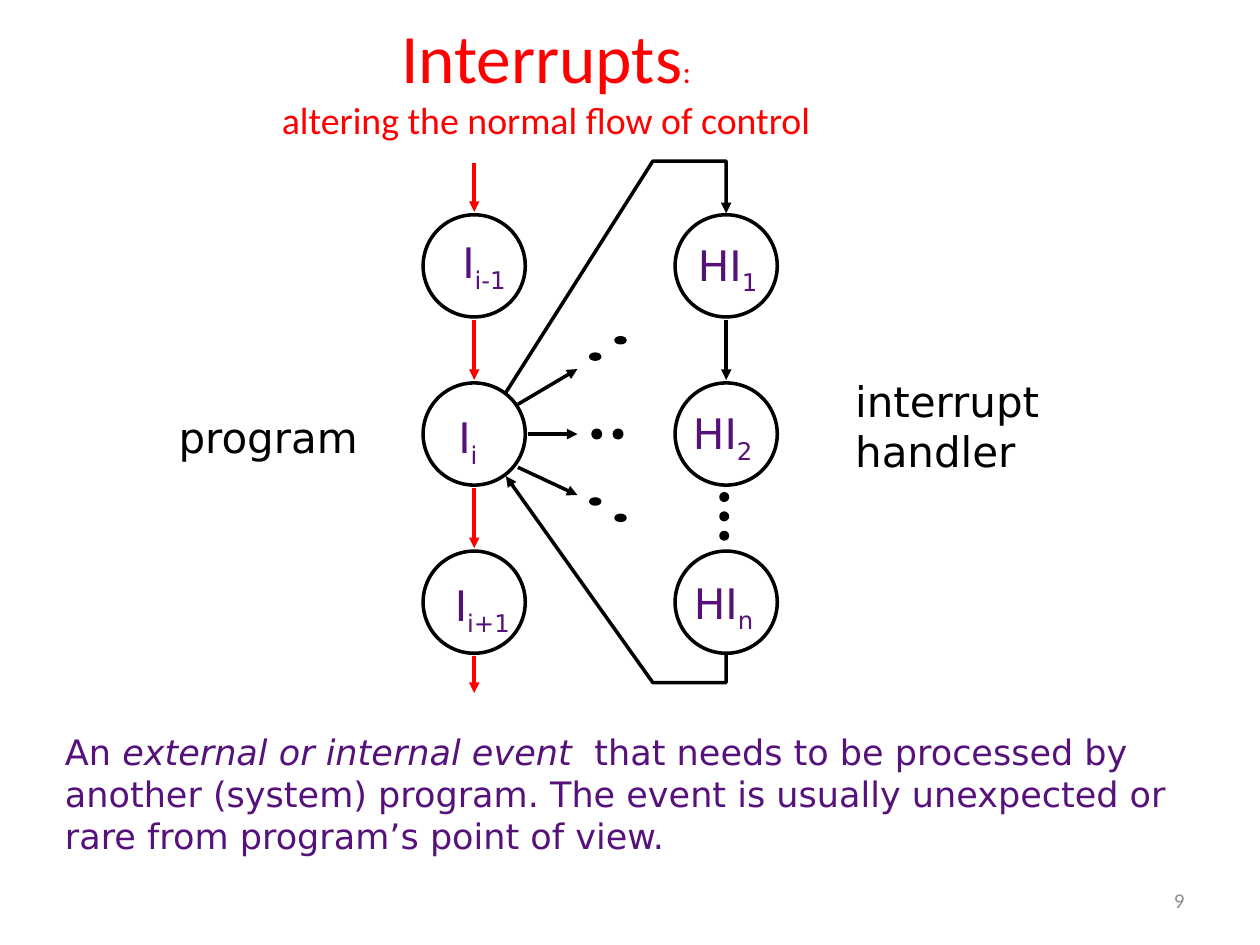
from dataclasses import dataclass

from pptx import Presentation
from pptx import util as u
from pptx.dml.color import RGBColor
from pptx.enum import shapes, text
from pptx.oxml import ns, xmlchemy


@dataclass(frozen=True)
class Theme:
    red: str = "FF0000"
    black: str = "000000"
    white: str = "FFFFFF"
    purple: str = "56127A"
    grey: str = "8C8C8C"
    heading_font: str = "Calibri"
    body_font: str = "DejaVu Sans"
    title_size: float = 39.6
    colon_size: float = 18
    subtitle_size: float = 21.6
    label_size: float = 24
    body_size: float = 20
    number_size: float = 12
    line_width: float = 2


THEME = Theme()
PROGRAM_X, HANDLER_X = 9.56, 14.64
ROWS = [5.36 + 3.39 * row for row in range(3)]
RADIUS = 1.03


def style_line(shape, color, arrow=False):
    shape.line.color.rgb = RGBColor.from_string(color)
    shape.line.width = u.Pt(THEME.line_width)
    if arrow:
        tail = xmlchemy.OxmlElement("a:tailEnd")
        tail.set("type", "triangle")
        shape.element.spPr.find(ns.qn("a:ln")).append(tail)


def add_arrow(page, start, end, color=THEME.black):
    ends = [u.Cm(value) for value in (*start, *end)]
    arrow = page.shapes.add_connector(shapes.MSO_CONNECTOR.STRAIGHT, *ends)
    style_line(arrow, color, arrow=True)
    arrow.element.spPr.append(xmlchemy.OxmlElement("a:effectLst"))


def add_route(page, points):
    corners = [(u.Cm(x), u.Cm(y)) for x, y in points]
    builder = page.shapes.build_freeform(*corners[0])
    builder.add_line_segments(corners[1:], close=False)
    route = builder.convert_to_shape()
    route.shadow.inherit = False
    route.fill.background()
    style_line(route, THEME.black, arrow=True)


def add_ellipse(page, center, width, height, fill=None):
    x, y = center
    ellipse = page.shapes.add_shape(
        shapes.MSO_SHAPE.OVAL, u.Cm(x - width / 2), u.Cm(y - height / 2),
        u.Cm(width), u.Cm(height))
    ellipse.shadow.inherit = False
    if fill:
        ellipse.fill.solid()
        ellipse.fill.fore_color.rgb = RGBColor.from_string(fill)
    else:
        ellipse.fill.background()
    style_line(ellipse, THEME.black)


def add_span(para, words, font, size, color, italic=False, subscript=False):
    span = para.add_run()
    span.text = words
    span.font.name = font
    span.font.size = u.Pt(size)
    span.font.color.rgb = RGBColor.from_string(color)
    if italic:
        span.font.italic = True
    if subscript:
        span.font._element.set("baseline", "-25000")


def add_text(page, place, lines, align=text.PP_ALIGN.LEFT,
             anchor=text.MSO_ANCHOR.TOP, wrap=True, grow=True, **style):
    box = page.shapes.add_textbox(*[u.Cm(value) for value in place])
    frame = box.text_frame
    frame.word_wrap = wrap
    frame.vertical_anchor = anchor
    frame.auto_size = (text.MSO_AUTO_SIZE.SHAPE_TO_FIT_TEXT if grow
                       else text.MSO_AUTO_SIZE.NONE)
    for index, spans in enumerate(lines):
        para = frame.add_paragraph() if index else frame.paragraphs[0]
        para.alignment = align
        for words, changes in spans:
            if words == "\n":
                para.add_line_break()
            else:
                add_span(para, words, **{**style, **changes})


def add_label(page, place, lines, color):
    add_text(page, place, lines, wrap=False, font=THEME.body_font,
             size=THEME.label_size, color=color)


def add_title(page):
    add_text(page, (1.06, 0.2, 19.9, 2.75),
             [[("Interrupts", {}),
               (":", {"size": THEME.colon_size}),
               ("\n", {}),
               ("altering the normal flow of control",
                {"size": THEME.subtitle_size})]],
             align=text.PP_ALIGN.CENTER, anchor=text.MSO_ANCHOR.MIDDLE,
             grow=False, font=THEME.heading_font, size=THEME.title_size,
             color=THEME.red)


def add_flow(page):
    middle = ROWS[1]
    add_route(page, [(HANDLER_X, 12.8), (HANDLER_X, 13.76),
                     (13.16, 13.76), (10.2, 9.6)])
    add_route(page, [(10.2, 7.91), (13.16, 3.25),
                     (HANDLER_X, 3.25), (HANDLER_X, 4.3)])
    for y in ROWS:
        add_ellipse(page, (PROGRAM_X, y), 2 * RADIUS, 2 * RADIUS)
        add_ellipse(page, (HANDLER_X, y), 2 * RADIUS, 2 * RADIUS,
                    THEME.white if y == ROWS[-1] else None)

    starts = [3.28] + [y + RADIUS + 0.06 for y in ROWS]
    ends = [y - RADIUS - 0.06 for y in ROWS] + [13.97]
    for start, end in zip(starts, ends):
        add_arrow(page, (PROGRAM_X, start), (PROGRAM_X, end), THEME.red)
    add_arrow(page, (HANDLER_X, starts[1]), (HANDLER_X, ends[1]))
    add_arrow(page, (10.44, 8.15), (11.64, 7.44))
    add_arrow(page, (10.64, middle), (11.64, middle))
    add_arrow(page, (10.44, 9.42), (11.64, 9.98))


def add_dots(page):
    for center in [(12, 7.19), (12.51, 6.86), (12, 10.11), (12.51, 10.44)]:
        add_ellipse(page, center, 0.18, 0.1, THEME.black)
    for x in (12.03, 12.46):
        add_ellipse(page, (x, ROWS[1]), 0.15, 0.15, THEME.black)
    for step in range(3):
        add_ellipse(page, (14.6, 10.02 + 0.39 * step), 0.13, 0.13, THEME.black)


def add_labels(page):
    instructions = [
        ("I", "i-1", 9.07, 4.65, 1.63), ("I", "i", 8.99, 8.18, 1.02),
        ("I", "i+1", 8.92, 11.56, 1.83), ("HI", "1", 13.82, 4.7, 1.85),
        ("HI", "2", 13.72, 8.1, 1.85), ("HI", "n", 13.74, 11.51, 1.85),
    ]
    for name, index, left, top, width in instructions:
        add_label(page, (left, top, width, 1.27),
                  [[(name, {}), (index, {"subscript": True})]], THEME.purple)
    add_label(page, (3.35, 8.18, 4.3, 1.27), [[("program", {})]], THEME.black)
    add_label(page, (16.99, 7.44, 4.6, 2.29),
              [[("interrupt", {})], [("handler", {})]], THEME.black)


def add_explanation(page):
    add_text(page, (1.06, 14.6, 23.3, 2.8),
             [[("An ", {}),
               ("external or internal event ", {"italic": True}),
               (" that needs to be processed by another (system) program. "
                "The event is usually unexpected or rare from program’s "
                "point of view.", {})]],
             font=THEME.body_font, size=THEME.body_size, color=THEME.purple)


def add_page_number(page):
    add_text(page, (18.2, 17.65, 5.93, 1.01), [[("9", {})]],
             align=text.PP_ALIGN.RIGHT, anchor=text.MSO_ANCHOR.MIDDLE,
             grow=False, font=THEME.heading_font, size=THEME.number_size,
             color=THEME.grey)


def main():
    deck = Presentation()
    deck.slide_width, deck.slide_height = u.Cm(25.4), u.Cm(19.05)
    page = deck.slides.add_slide(deck.slide_layouts[6])
    add_title(page)
    add_flow(page)
    add_dots(page)
    add_labels(page)
    add_explanation(page)
    add_page_number(page)
    deck.save("out.pptx")


if __name__ == "__main__":
    main()
